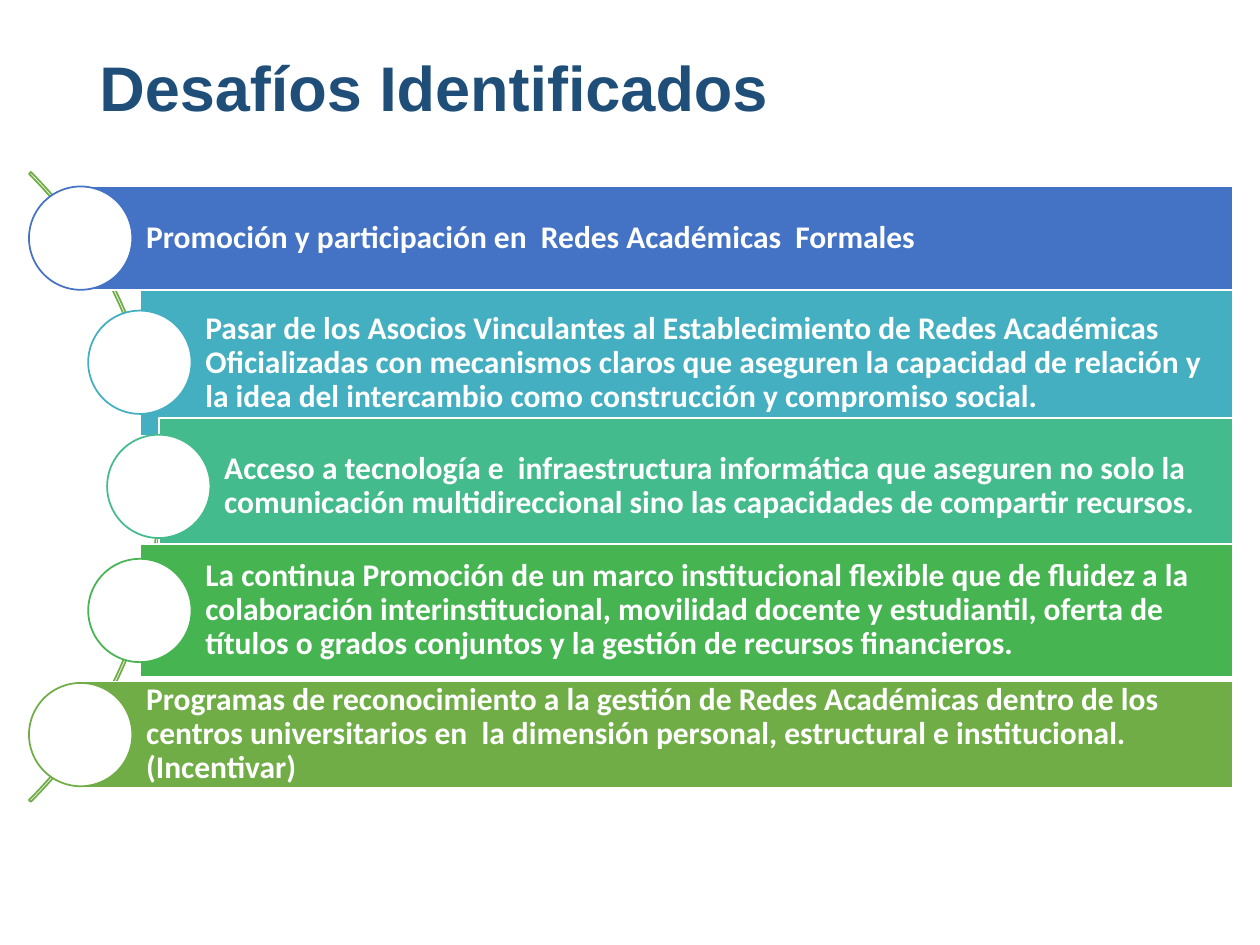
"""Build the slide of identified challenges: five bars strung along an arc."""
from dataclasses import dataclass

from pptx import Presentation
from pptx import util as u
from pptx.dml.color import RGBColor
from pptx.enum import shapes, text

COLS, ROWS = 100, 75
COLORS = {
    "white": "FFFFFF", "title": "1F4E79", "blue": "4472C4", "teal": "43AFC0",
    "mint": "43BB8D", "green": "45B451", "olive": "70AD47",
}
BAR_RIGHT = 97.85
CIRCLE = 8.2
FIRST_CENTER, PITCH = 18.9, 9.85

prs = Presentation()
prs.slide_width, prs.slide_height = u.Inches(10), u.Inches(7.5)
s = prs.slides.add_slide(prs.slide_layouts[6])


@dataclass(frozen=True)
class Box:
    """Place on the grid, in columns and rows."""
    col: float
    row: float
    cols: float
    rows: float

    def emu(self) -> tuple[int, int, int, int]:
        """Return left, top, width and height."""
        dx, dy = prs.slide_width / COLS, prs.slide_height / ROWS
        return (round(self.col * dx), round(self.row * dy),
                round(self.cols * dx), round(self.rows * dy))


@dataclass(frozen=True)
class Challenge:
    """One bar with its circle."""
    words: str
    color: str
    col: float
    row: float
    rows: float


CHALLENGES = [
    Challenge("Promoción y participación en  Redes Académicas  Formales",
              "blue", 6.4, 14.8, 8.2),
    Challenge("Pasar de los Asocios Vinculantes al Establecimiento de Redes "
              "Académicas Oficializadas con mecanismos claros que aseguren la "
              "capacidad de relación y la idea del intercambio como "
              "construcción y compromiso social.", "teal", 11.1, 23, 11.6),
    Challenge("Acceso a tecnología e  infraestructura informática que aseguren "
              "no solo la comunicación multidireccional sino las capacidades de "
              "compartir recursos.", "mint", 12.6, 33.2, 10.8),
    Challenge("La continua Promoción de un marco institucional flexible que de "
              "fluidez a la colaboración interinstitucional, movilidad docente y "
              "estudiantil, oferta de títulos o grados conjuntos y la gestión de "
              "recursos financieros.", "green", 11.1, 43.2, 10.5),
    Challenge("Programas de reconocimiento a la gestión de Redes Académicas "
              "dentro de los centros universitarios en  la dimensión personal, "
              "estructural e institucional. (Incentivar)",
              "olive", 6.4, 54.1, 8.4),
]


def rgb(name: str) -> RGBColor:
    """Look up a colour."""
    return RGBColor.from_string(COLORS[name])


def add_shape(kind: shapes.MSO_SHAPE, box: Box, fill: str | None, line: str):
    """Draw a preset shape with a thin outline."""
    sp = s.shapes.add_shape(kind, *box.emu())
    sp.shadow.inherit = False
    if fill:
        sp.fill.solid()
        sp.fill.fore_color.rgb = rgb(fill)
    else:
        sp.fill.background()
    sp.line.color.rgb = rgb(line)
    sp.line.width = u.Pt(1)
    return sp


def write(sp, words: str, font: str, size: int, color: str) -> None:
    """Write one bold left-aligned run, centred vertically."""
    tf = sp.text_frame
    tf.word_wrap = True
    tf.vertical_anchor = text.MSO_ANCHOR.MIDDLE
    p = tf.paragraphs[0]
    p.alignment = text.PP_ALIGN.LEFT
    p.line_spacing = 0.9
    r = p.add_run()
    r.text = words
    r.font.name, r.font.size, r.font.bold = font, u.Pt(size), True
    r.font.color.rgb = rgb(color)


def add_challenge(item: Challenge, center: float) -> None:
    """Draw a bar, and a circle centred on its left edge."""
    bar = add_shape(shapes.MSO_SHAPE.RECTANGLE,
                    Box(item.col, item.row, BAR_RIGHT - item.col, item.rows),
                    item.color, "white")
    tf = bar.text_frame
    tf.margin_left = u.Inches(0.52)
    tf.margin_top = tf.margin_right = tf.margin_bottom = u.Inches(0.05)
    write(bar, item.words, "Calibri", 18, "white")
    add_shape(shapes.MSO_SHAPE.OVAL,
              Box(item.col - CIRCLE / 2, center - CIRCLE / 2, CIRCLE, CIRCLE),
              "white", item.color)


def main() -> None:
    """Build and save the slide."""
    title = s.shapes.add_textbox(*Box(6.9, 0, 86.2, 14.5).emu())
    write(title, "Desafíos Identificados", "Arial", 36, "title")
    arc = add_shape(shapes.MSO_SHAPE.BLOCK_ARC,
                    Box(-57.9, 3.3, 70.7, 70.7), None, "olive")
    for i, value in enumerate((189, 27, 0.003)):
        arc.adjustments[i] = value
    for i, item in enumerate(CHALLENGES):
        add_challenge(item, FIRST_CENTER + i * PITCH)
    prs.save("out.pptx")


if __name__ == "__main__":
    main()
